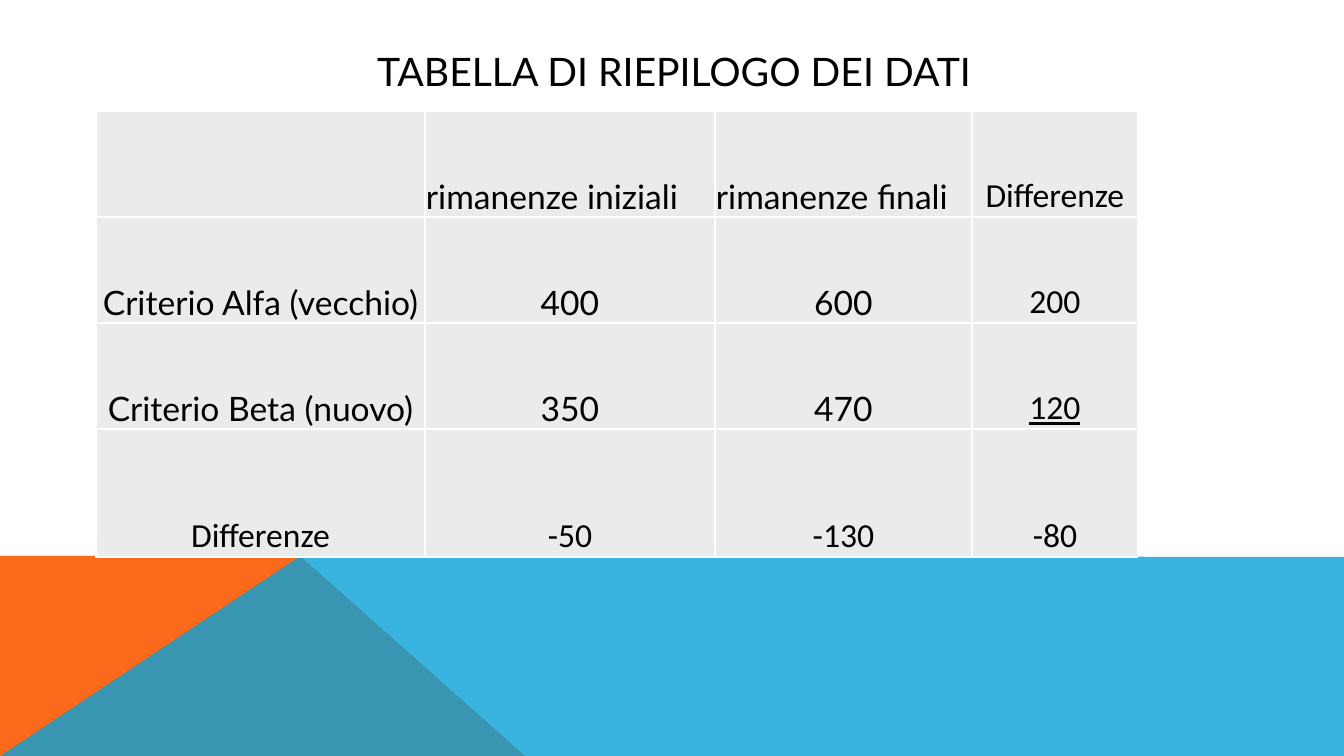
from lxml.etree import SubElement
from pptx import Presentation
from pptx.dml.color import RGBColor
from pptx.enum.text import MSO_ANCHOR, PP_ALIGN
from pptx.oxml import parse_xml
from pptx.oxml.ns import nsdecls, qn
from pptx.util import Emu, Pt

PX = 914400 / 100.8


def px(length):
    return Emu(round(length * PX))


def write(text_frame, text, font="Lato", size=24, align=PP_ALIGN.CENTER, underline=False):
    paragraph = text_frame.paragraphs[0]
    paragraph.alignment = align
    run = paragraph.add_run()
    run.text = text
    run.font.name = font
    run.font.size = Pt(size)
    run.font.underline = underline
    run.font.color.rgb = RGBColor.from_string("000000")


presentation = Presentation()
presentation.slide_width = px(1344)
presentation.slide_height = px(756)
slide = presentation.slides.add_slide(presentation.slide_layouts[6])

# Footer bands
bands = [
    ("F96A1B", 100, [(0, 756), (0, 556), (300, 556), (525, 756)]),
    ("08A1D9", 80, [(0, 756), (300, 556), (1344, 557), (1344, 756)]),
]
for color, opacity, points in bands:
    builder = slide.shapes.build_freeform(*points[0], scale=PX)
    builder.add_line_segments(points[1:], close=True)
    band = builder.convert_to_shape()
    band.shadow.inherit = False
    band.line.fill.background()
    band.fill.solid()
    band.fill.fore_color.rgb = RGBColor.from_string(color)
    if opacity < 100:
        fill_color = band.fill._xPr.find(qn("a:solidFill"))[0]
        SubElement(fill_color, qn("a:alpha"), val=str(opacity * 1000))

# Title
title = slide.shapes.add_textbox(px(121), px(40), px(1106), px(61))
title.text_frame.word_wrap = True
title.text_frame.vertical_anchor = MSO_ANCHOR.MIDDLE
write(title.text_frame, "TABELLA DI RIEPILOGO DEI DATI", size=28)

# Summary table
rows = [
    ["", "rimanenze iniziali", "rimanenze finali", "Differenze"],
    ["Criterio Alfa (vecchio)", "400", "600", "200"],
    ["Criterio Beta (nuovo)", "350", "470", "120"],
    ["Differenze", "-50", "-130", "-80"],
]
column_widths = [329, 290, 257, 166]
row_heights = [106, 106, 106, 128]
table = slide.shapes.add_table(
    len(rows), len(column_widths), px(96), px(111),
    px(sum(column_widths)), px(sum(row_heights))).table
table.first_row = False
table.horz_banding = False
for column, width in zip(table.columns, column_widths):
    column.width = px(width)
for row, height in zip(table.rows, row_heights):
    row.height = px(height)

last_row, last_column = len(rows) - 1, len(column_widths) - 1
for i, values in enumerate(rows):
    for j, value in enumerate(values):
        cell = table.cell(i, j)
        cell.margin_left = cell.margin_right = cell.margin_top = px(1)
        cell.margin_bottom = 0
        cell.vertical_anchor = MSO_ANCHOR.BOTTOM
        for side in "LRTB":
            cell._tc.get_or_add_tcPr().append(parse_xml(
                f'<a:ln{side} {nsdecls("a")} w="12700"><a:solidFill>'
                f'<a:srgbClr val="FFFFFF"/></a:solidFill></a:ln{side}>'))
        cell.fill.solid()
        cell.fill.fore_color.rgb = RGBColor.from_string("EAECEB")
        if value:
            is_difference = i == last_row or j == last_column
            is_header = i == 0 and not is_difference
            write(cell.text_frame, value,
                  font="Calibri" if is_difference else "Lato",
                  align=PP_ALIGN.LEFT if is_header else PP_ALIGN.CENTER,
                  underline=value == "120")

presentation.save("out.pptx")
